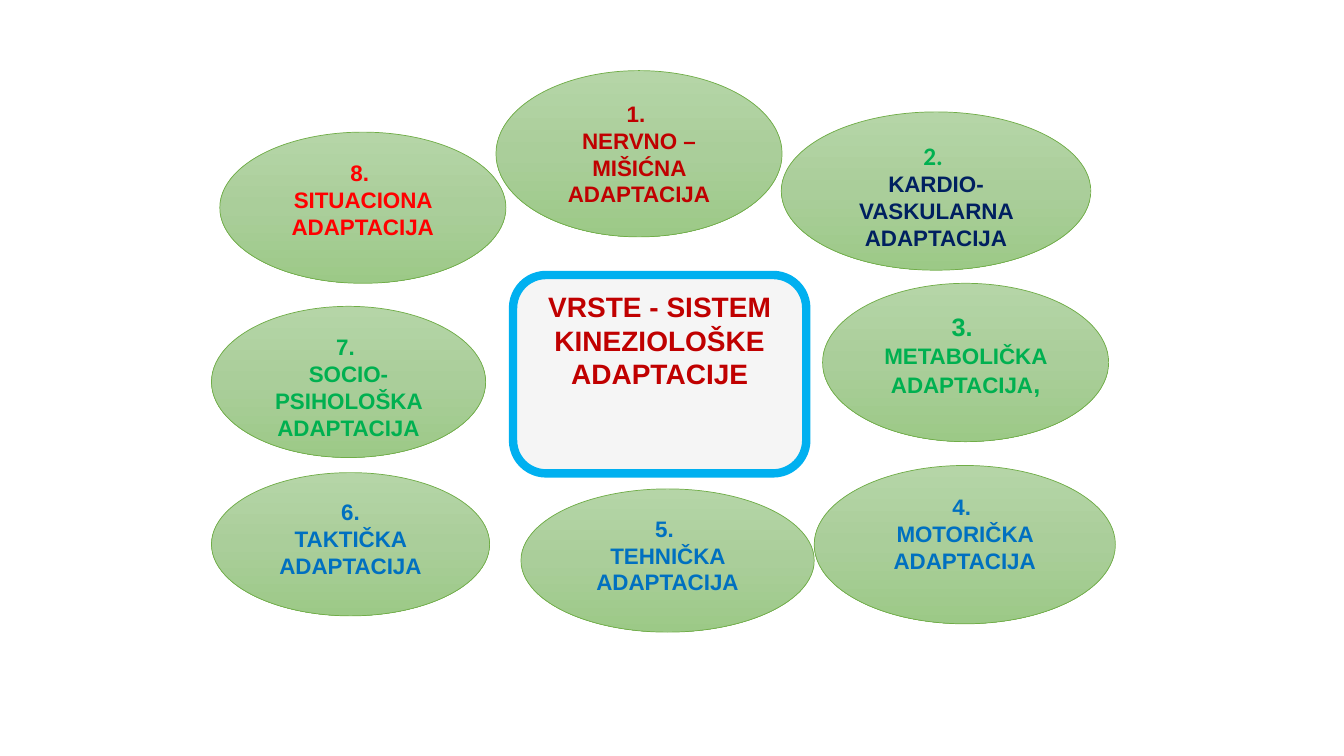
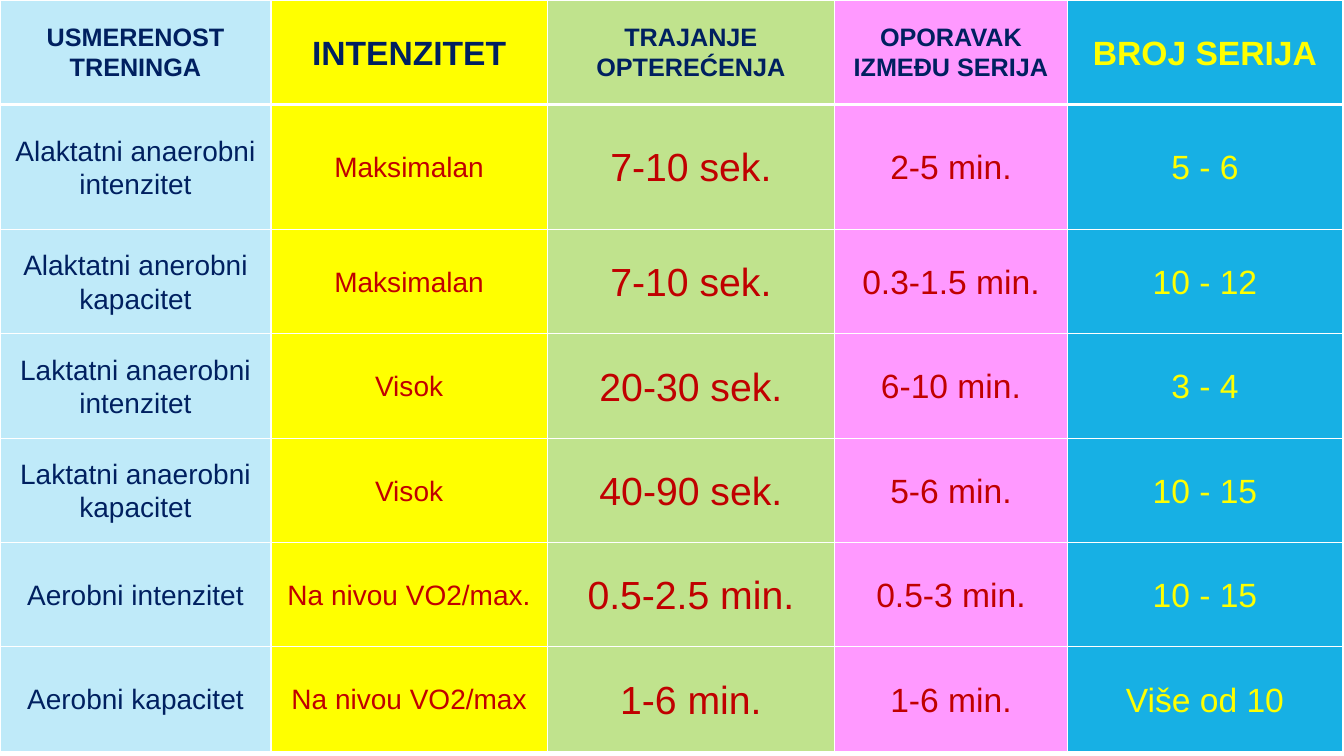
import copy
from dataclasses import dataclass

import pptx
import pptx.dml.color
import pptx.enum.shapes
import pptx.enum.text
import pptx.oxml
import pptx.oxml.ns
import pptx.util

Cm = pptx.util.Cm
Pt = pptx.util.Pt


@dataclass(frozen=True)
class Theme:
    font: str = "Arial"
    alt: str = "Calibri"
    navy: str = "002060"
    dark: str = "C00000"
    red: str = "FF0000"
    green: str = "00B050"
    blue: str = "0070C0"
    sky: str = "00B0F0"
    gold: str = "FFFF00"
    white: str = "FFFFFF"
    pale: str = "F5F5F5"
    edge: str = "70AD47"
    fade: tuple = ("B5D5A7", "AACE9A", "9CC987")
    cols: tuple = ("BFEAF9", "FFFF00", "C0E38D", "FF99FF", "17B0E4")
    small: int = 16
    label: int = 18
    text: int = 20
    large: int = 24
    huge: int = 28


T = Theme()

OVALS = [
    ((5.54, 3.33, 7.21, 3.81), T.red, "8. ", "SITUACIONA ADAPTACIJA"),
    ((19.69, 2.82, 7.8, 3.99), T.navy, "2. ", "KARDIO-VASKULARNA ADAPTACIJA"),
    ((12.5, 1.78, 7.21, 4.19), T.dark, "1. ", "NERVNO – MIŠIĆNA ADAPTACIJA"),
    ((20.73, 7.14, 7.21, 3.99), T.green, "3. ", "METABOLIČKA ADAPTACIJA"),
    ((20.52, 11.73, 7.59, 3.99), T.blue, "4. ", "MOTORIČKA ADAPTACIJA"),
    ((13.13, 12.32, 7.39, 3.61), T.blue, "5. ", "TEHNIČKA ADAPTACIJA"),
    ((5.33, 11.91, 7.01, 3.61), T.blue, "6.", "TAKTIČKA ADAPTACIJA"),
    ((5.33, 7.72, 6.91, 3.81), T.green, "7. ", "SOCIO-PSIHOLOŠKA ADAPTACIJA"),
]

WIDTHS = (6.83, 6.96, 7.24, 5.87, 6.93)
HEIGHTS = (2.63, 3.15) + (2.63,) * 5
HEAD = (T.label, T.large, T.label, T.label, T.large)
BODY = (T.text, T.text, T.huge, T.large, T.large)
HEAD_INK = (T.navy,) * 4 + (T.gold,)
BODY_INK = (T.navy,) + (T.dark,) * 3 + (T.gold,)
ROWS = [
    ("USMERENOST TRENINGA", "INTENZITET", "TRAJANJE OPTEREĆENJA",
     "OPORAVAK IZMEĐU SERIJA", "BROJ SERIJA"),
    ("Alaktatni anaerobni intenzitet", "Maksimalan", "7-10 sek.", "2-5 min.", "5 - 6"),
    ("Alaktatni anerobni kapacitet", "Maksimalan", "7-10 sek.", "0.3-1.5 min.", "10 - 12"),
    ("Laktatni anaerobni intenzitet", "Visok", "20-30 sek.", "6-10 min.", "3 - 4"),
    ("Laktatni anaerobni kapacitet", "Visok", "40-90 sek.", "5-6 min.", "10 - 15"),
    ("Aerobni intenzitet", "Na nivou VO2/max.", "0.5-2.5 min.", "0.5-3 min.", "10 - 15"),
    ("Aerobni kapacitet", "Na nivou VO2/max", "1-6 min.", "1-6 min.", "Više od 10"),
]


def rgb(code):
    return pptx.dml.color.RGBColor.from_string(code)


def write(par, text, size, ink, bold=True, face=T.font):
    par.alignment = pptx.enum.text.PP_ALIGN.CENTER
    par.font.name = face
    par.font.size = Pt(size)
    par.font.bold = bold
    par.font.color.rgb = rgb(ink)
    par.add_run().text = text


def add_box(slide, kind, place, line, width):
    box = slide.shapes.add_shape(kind, *map(Cm, place))
    box.shadow.inherit = False
    box.line.color.rgb = rgb(line)
    box.line.width = Pt(width)
    frame = box.text_frame
    frame.word_wrap = True
    frame.vertical_anchor = pptx.enum.text.MSO_ANCHOR.TOP
    return box


def shade(box):
    box.fill.gradient()
    box.fill.gradient_angle = 270
    stops = box._element.spPr.find(".//" + pptx.oxml.ns.qn("a:gsLst"))
    stops.insert(1, copy.deepcopy(stops[0]))
    for i, stop in enumerate(box.fill.gradient_stops):
        stop.position = i / 2
        stop.color.rgb = rgb(T.fade[i])


def add_oval(slide, place, ink, mark, name):
    oval = add_box(slide, pptx.enum.shapes.MSO_SHAPE.OVAL, place, T.edge, 0.5)
    shade(oval)
    first = oval.text_frame.paragraphs[0]
    last = oval.text_frame.add_paragraph()
    write(first, mark, T.small, ink)
    write(last, name, T.small, ink)
    return first, last


def add_hub(slide):
    kind = pptx.enum.shapes.MSO_SHAPE.ROUNDED_RECTANGLE
    hub = add_box(slide, kind, (12.93, 6.93, 7.39, 5), T.sky, 6)
    hub.fill.solid()
    hub.fill.fore_color.rgb = rgb(T.pale)
    frame = hub.text_frame
    write(frame.paragraphs[0], "VRSTE - SISTEM KINEZIOLOŠKE", T.text, T.dark)
    write(frame.add_paragraph(), "ADAPTACIJE", T.text, T.dark)


def add_edge(cell, side, width):
    space = pptx.oxml.ns.nsdecls("a")
    cell._tc.get_or_add_tcPr().append(pptx.oxml.parse_xml(
        f'<a:ln{side} {space} w="{Pt(width)}"><a:solidFill>'
        f'<a:srgbClr val="{T.white}"/></a:solidFill></a:ln{side}>'))


def fill_cell(cell, text, row, col):
    head = row == 0
    for side, thick in (("L", False), ("R", False), ("T", row == 1), ("B", head)):
        add_edge(cell, side, 3 if thick else 1)
    cell.fill.solid()
    cell.fill.fore_color.rgb = rgb(T.cols[col])
    cell.margin_left = cell.margin_right = Cm(0.08)
    cell.margin_top = cell.margin_bottom = Cm(0.08)
    cell.vertical_anchor = pptx.enum.text.MSO_ANCHOR.MIDDLE
    par = cell.text_frame.paragraphs[0]
    par.line_spacing = 1.07
    size = (HEAD if head else BODY)[col]
    ink = (HEAD_INK if head else BODY_INK)[col]
    write(par, text, size, ink, head)


def add_grid(slide):
    size = map(Cm, (0, 0, sum(WIDTHS), sum(HEIGHTS)))
    grid = slide.shapes.add_table(len(ROWS), len(WIDTHS), *size).table
    for col, width in zip(grid.columns, WIDTHS):
        col.width = Cm(width)
    for row, height in zip(grid.rows, HEIGHTS):
        row.height = Cm(height)
    for r, row in enumerate(ROWS):
        for c, text in enumerate(row):
            fill_cell(grid.cell(r, c), text, r, c)


def add_map(slide):
    marks = {}
    for oval in OVALS:
        marks[oval[2].strip()] = add_oval(slide, *oval)
    second = marks["2."][0].font
    second.name = T.alt
    second.size = Pt(T.label)
    second.color.rgb = rgb(T.green)
    first, last = marks["3."]
    first.font.size = Pt(T.label)
    comma = last.add_run()
    comma.text = ","
    comma.font.size = Pt(T.label)
    add_hub(slide)


def main():
    deck = pptx.Presentation()
    deck.slide_width = Cm(33.87)
    deck.slide_height = Cm(19.05)
    for build in (add_map, add_grid):
        build(deck.slides.add_slide(deck.slide_layouts[6]))
    deck.save("out.pptx")


if __name__ == "__main__":
    main()
